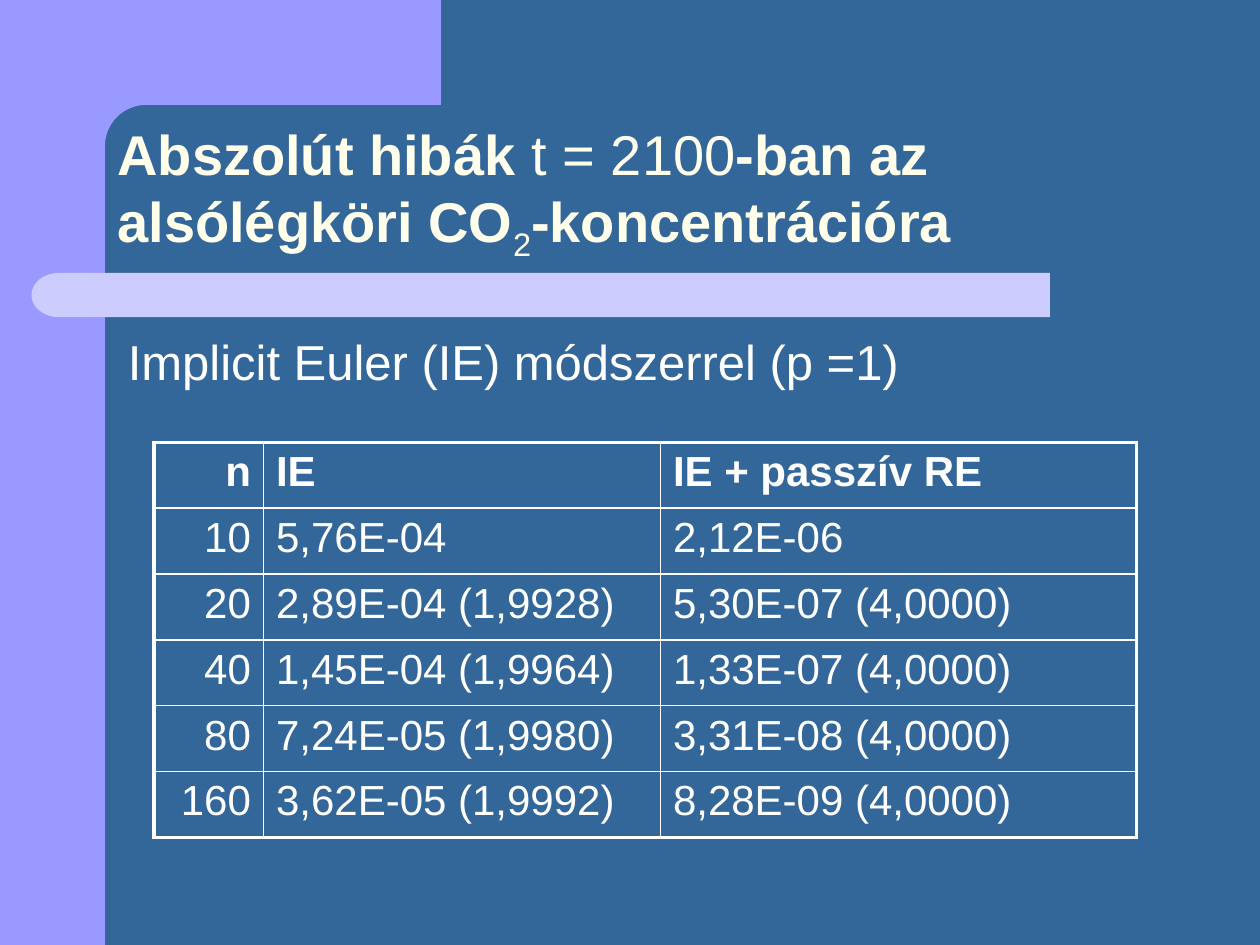
"""Builds the slide on absolute errors of the implicit Euler method."""
from dataclasses import dataclass
from math import cos, pi, sin

from lxml import etree
from pptx import Presentation
from pptx.dml.color import RGBColor
from pptx.enum.shapes import MSO_SHAPE
from pptx.enum.text import MSO_ANCHOR, PP_ALIGN
from pptx.oxml.ns import qn
from pptx.util import Pt

RECTANGLE = MSO_SHAPE.RECTANGLE
DELAY = MSO_SHAPE.FLOWCHART_DELAY
TOP, BOTTOM = MSO_ANCHOR.TOP, MSO_ANCHOR.BOTTOM
LEFT, RIGHT = PP_ALIGN.LEFT, PP_ALIGN.RIGHT
FONT = "Arial"
BACKGROUND, VIOLET, LAVENDER = "336699", "9999FF", "CCCCFF"
CREAM, WHITE = "FFFFEB", "FFFFFF"
OUTER_BORDER, INNER_BORDER = 2.25, 1


@dataclass(frozen=True)
class Box:
    """Position and size in points."""
    left: float
    top: float
    width: float
    height: float

    def lengths(self) -> tuple:
        """Return the four lengths for python-pptx."""
        return Pt(self.left), Pt(self.top), Pt(self.width), Pt(self.height)


@dataclass(frozen=True)
class Panel:
    """A plain decorative shape."""
    kind: int
    box: Box
    color: str
    rotation: float = 0


@dataclass(frozen=True)
class TextRun:
    """A piece of text with its weight and baseline shift."""
    text: str
    bold: bool = False
    baseline: int = 0


PANELS = [
    Panel(RECTANGLE, Box(0, 0, 60, 540), VIOLET),
    Panel(RECTANGLE, Box(48, 156, 552, 25.2), LAVENDER),
    Panel(DELAY, Box(18, 156, 31, 25.2), LAVENDER, 180),
]
TITLE = [
    TextRun("Abszolút hibák ", True),
    TextRun("t = 2100"),
    TextRun("-ban az alsólégköri CO", True),
    TextRun("2", baseline=-25000),
    TextRun("-koncentrációra", True),
]
SUBTITLE = [TextRun("Implicit Euler (IE) módszerrel (p =1)")]
TABLE_BOX = Box(88, 252.7, 561.6, 226)
COLUMN_WIDTHS = [62.6, 226.8, 272.2]
ROWS = [
    ("n", "IE", "IE + passzív RE"),
    ("10", "5,76E-04", "2,12E-06"),
    ("20", "2,89E-04 (1,9928)", "5,30E-07 (4,0000)"),
    ("40", "1,45E-04 (1,9964)", "1,33E-07 (4,0000)"),
    ("80", "7,24E-05 (1,9980)", "3,31E-08 (4,0000)"),
    ("160", "3,62E-05 (1,9992)", "8,28E-09 (4,0000)"),
]


def paint(target, color: str) -> None:
    """Give a fill a solid colour."""
    target.solid()
    target.fore_color.rgb = RGBColor.from_string(color)


def finish_shape(shape, color: str) -> None:
    """Make a shape flat: one fill, no line, no shadow."""
    paint(shape.fill, color)
    shape.line.fill.background()
    shape.shadow.inherit = False


def draw_panel(slide, panel: Panel) -> None:
    """Draw one decorative shape."""
    shape = slide.shapes.add_shape(panel.kind, *panel.box.lengths())
    shape.rotation = panel.rotation
    finish_shape(shape, panel.color)


def draw_corner(slide) -> None:
    """Draw the top block whose inner corner is rounded."""
    center, radius, steps = 83.5, 23.5, 16
    angles = [pi / 2 * step / steps for step in range(steps + 1)]
    curve = [(center - radius * sin(angle), center - radius * cos(angle)) for angle in angles]
    points = [(252, 0), (252, 60), *curve, (60, 92), (36, 92), (36, 0)]
    vertices = [(Pt(x), Pt(y)) for x, y in points]
    builder = slide.shapes.build_freeform(*vertices[0])
    builder.add_line_segments(vertices[1:], close=True)
    finish_shape(builder.convert_to_shape(), VIOLET)


def add_runs(paragraph, runs: list[TextRun], size: float, color: str) -> None:
    """Add styled runs to a paragraph."""
    for text_run in runs:
        run = paragraph.add_run()
        run.text = text_run.text
        run.font.name = FONT
        run.font.size = Pt(size)
        run.font.bold = text_run.bold
        paint(run.font.fill, color)
        if text_run.baseline:
            run._r.get_or_add_rPr().set("baseline", str(text_run.baseline))


def draw_text(slide, box: Box, runs: list[TextRun], size: float, color: str,
              anchor=TOP, line_spacing: float = 1, space_before: float = 0) -> None:
    """Draw a wrapped text box with one paragraph."""
    frame = slide.shapes.add_textbox(*box.lengths()).text_frame
    frame.word_wrap = True
    frame.vertical_anchor = anchor
    paragraph = frame.paragraphs[0]
    paragraph.line_spacing = line_spacing
    paragraph.space_before = Pt(space_before)
    add_runs(paragraph, runs, size, color)


def set_border(cell, side: str, width: float) -> None:
    """Draw one white cell border."""
    line = etree.SubElement(cell._tc.get_or_add_tcPr(), qn(f"a:ln{side}"), w=str(Pt(width)))
    fill = etree.SubElement(line, qn("a:solidFill"))
    etree.SubElement(fill, qn("a:srgbClr"), val=WHITE)


def draw_table(slide) -> None:
    """Draw the error table with a heavier outer frame."""
    last_row, last_column = len(ROWS) - 1, len(COLUMN_WIDTHS) - 1
    table = slide.shapes.add_table(len(ROWS), len(COLUMN_WIDTHS), *TABLE_BOX.lengths()).table
    table.first_row = table.horz_banding = False
    for column, width in zip(table.columns, COLUMN_WIDTHS):
        column.width = Pt(width)
    for row_index, texts in enumerate(ROWS):
        table.rows[row_index].height = Pt(TABLE_BOX.height / len(ROWS))
        for column_index, text in enumerate(texts):
            cell = table.cell(row_index, column_index)
            outer_sides = {
                "L": column_index == 0,
                "R": column_index == last_column,
                "T": row_index == 0,
                "B": row_index == last_row,
            }
            for side, is_outer in outer_sides.items():
                set_border(cell, side, OUTER_BORDER if is_outer else INNER_BORDER)
            cell.fill.background()
            paragraph = cell.text_frame.paragraphs[0]
            paragraph.alignment = RIGHT if column_index == 0 else LEFT
            add_runs(paragraph, [TextRun(text, row_index == 0)], 24, WHITE)


def main() -> None:
    """Build and save the presentation."""
    presentation = Presentation()
    presentation.slide_width, presentation.slide_height = Pt(720), Pt(540)
    slide = presentation.slides.add_slide(presentation.slide_layouts[6])
    paint(slide.background.fill, BACKGROUND)
    draw_corner(slide)
    for panel in PANELS:
        draw_panel(slide, panel)
    draw_text(slide, Box(60, 60, 624, 90), TITLE, 32, CREAM, BOTTOM, line_spacing=0.9)
    draw_text(slide, Box(66, 186, 605.5, 48), SUBTITLE, 28, WHITE, space_before=3)
    draw_table(slide)
    presentation.save("out.pptx")


if __name__ == "__main__":
    main()
